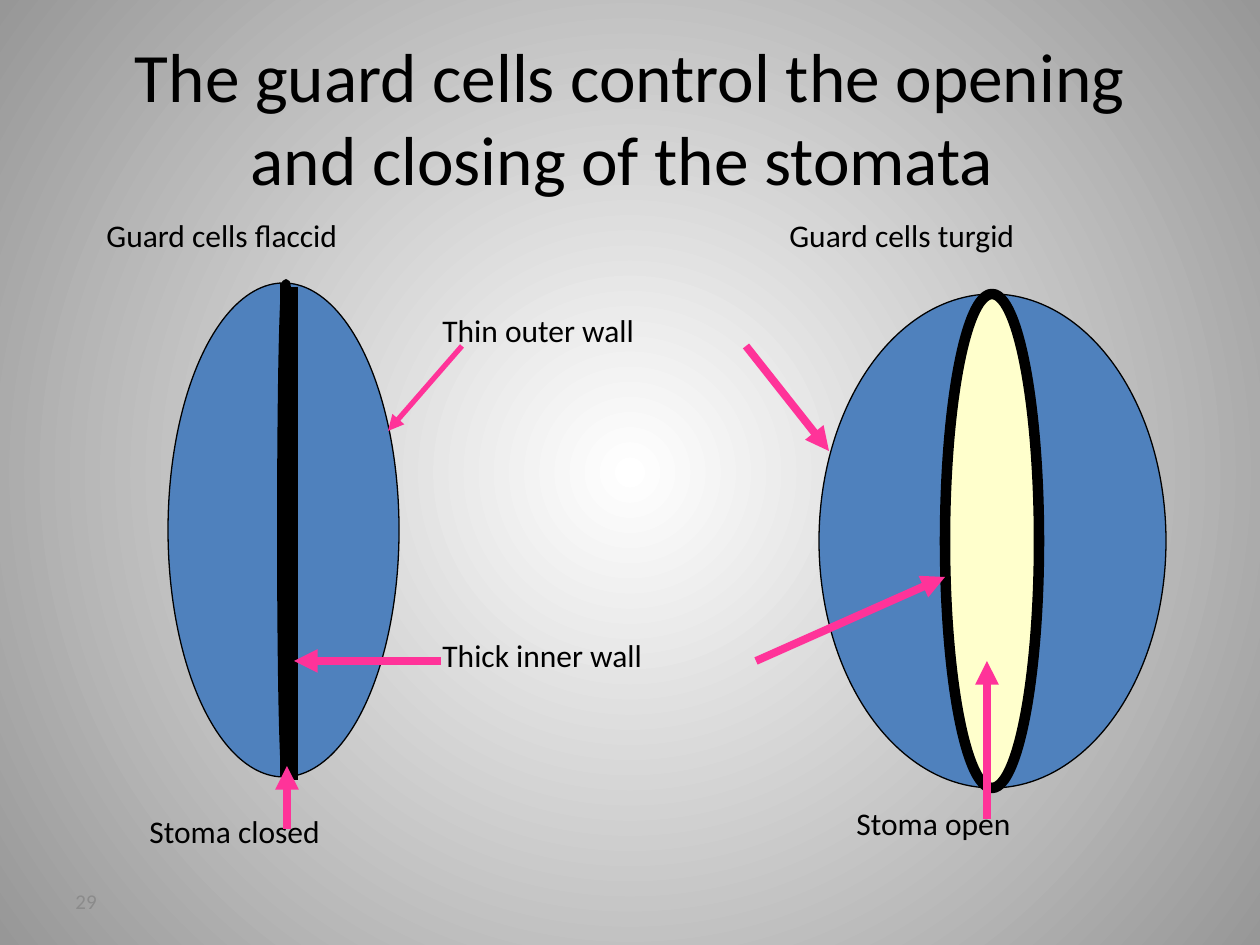
import pptx
import pptx.util
import pptx.dml.color
import pptx.enum.shapes
import pptx.enum.text
import pptx.oxml.ns
import lxml.etree

RGB = pptx.dml.color.RGBColor
BLACK = RGB(0, 0, 0)
WHITE = RGB(255, 255, 255)
EDGE = RGB(0x97, 0x97, 0x97)
GREY = RGB(0x8B, 0x8B, 0x8B)
BLUE = RGB(0x4F, 0x81, 0xBD)
CREAM = RGB(0xFF, 0xFF, 0xCC)
PINK = RGB(0xFF, 0x33, 0x99)
SCALE = 914400 / 126


def emu(*nums):
    return [pptx.util.Emu(round(n * SCALE)) for n in nums]


def child(node, tag, **attrs):
    return lxml.etree.SubElement(node, pptx.oxml.ns.qn(tag), attrs)


def write(frame, text, size=18, color=BLACK, font="Calibri", align=None, anchor=None):
    frame.word_wrap = True
    frame.auto_size = pptx.enum.text.MSO_AUTO_SIZE.NONE
    frame.vertical_anchor = anchor
    para = frame.paragraphs[0]
    para.alignment = align
    run = para.add_run()
    run.text = text
    run.font.size = pptx.util.Pt(size)
    run.font.name = font
    run.font.color.rgb = color


class Board:
    """Draw styled elements on the current slide."""

    def __init__(self, deck):
        self.slide = deck.slides.add_slide(deck.slide_layouts[5])
        self.shapes = self.slide.shapes

    def back(self, inner, outer):
        fill = self.slide.background.fill
        fill.gradient()
        for stop, color, place in zip(fill.gradient_stops, (inner, outer), (0, 1)):
            stop.color.rgb = color
            stop.position = place
        grad = next(self.slide.element.iter(pptx.oxml.ns.qn("a:gradFill")))
        grad.remove(grad.find(pptx.oxml.ns.qn("a:lin")))
        ring = child(grad, "a:path", path="circle")
        child(ring, "a:fillToRect", l="50000", t="50000", r="50000", b="50000")

    def title(self, text, *box):
        item = self.shapes.title
        item.left, item.top, item.width, item.height = emu(*box)
        write(item.text_frame, text, size=39.6,
              align=pptx.enum.text.PP_ALIGN.CENTER,
              anchor=pptx.enum.text.MSO_ANCHOR.MIDDLE)

    def label(self, text, *box, **style):
        write(self.shapes.add_textbox(*emu(*box)).text_frame, text, **style)

    def oval(self, box, fill, width, group=None):
        shapes = group.shapes if group else self.shapes
        kind = pptx.enum.shapes.MSO_SHAPE.OVAL
        item = shapes.add_shape(kind, *emu(*box))
        item.shadow.inherit = False
        item.fill.solid()
        item.fill.fore_color.rgb = fill
        item.line.color.rgb = BLACK
        item.line.width = pptx.util.Pt(width)

    def line(self, *ends, color=BLACK, width=4.5):
        kind = pptx.enum.shapes.MSO_CONNECTOR.STRAIGHT
        item = self.shapes.add_connector(kind, *emu(*ends))
        item.line.color.rgb = color
        item.line.width = pptx.util.Pt(width)
        child(item.element.spPr, "a:effectLst")
        return item

    def arrow(self, *ends, width=4.5):
        item = self.line(*ends, color=PINK, width=width)
        child(item.line._get_or_add_ln(), "a:tailEnd", type="triangle")


def main():
    deck = pptx.Presentation()
    deck.slide_width, deck.slide_height = emu(1260, 945)
    board = Board(deck)
    board.back(WHITE, EDGE)
    board.title("The guard cells control the opening and closing of the stomata ",
                63, 38, 1134, 157)

    board.oval((168, 283, 231, 494), BLUE, 0.75)
    board.oval((281, 283, 10, 494), CREAM, 4.5)
    for x, top in ((284, 283), (294, 287)):
        board.line(x, top, x, top + 493)

    group = board.shapes.add_group_shape()
    board.oval((819, 294, 347, 494), BLUE, 0.75, group)
    board.oval((945, 294, 94, 494), CREAM, 6, group)

    for text, x, y, wide in (
        ("Guard cells flaccid", 94, 210, 420),
        ("Guard cells turgid", 777, 210, 410),
        ("Thin outer wall", 430, 305, 388),
        ("Thick inner wall", 430, 630, 357),
        ("Stoma closed", 137, 806, 368),
        ("Stoma open", 844, 798, 347),
    ):
        board.label(text, x, y, wide, 63)

    board.arrow(462, 346, 388, 431, width=3)
    for ends in (
        (287, 829, 287, 766),
        (987, 819, 987, 661),
        (746, 346, 829, 451),
        (441, 661, 294, 661),
        (756, 661, 945, 577),
    ):
        board.arrow(*ends)

    board.label("29", 63, 876, 294, 50, size=12, color=GREY,
                anchor=pptx.enum.text.MSO_ANCHOR.MIDDLE)
    deck.save("out.pptx")


if __name__ == "__main__":
    main()
